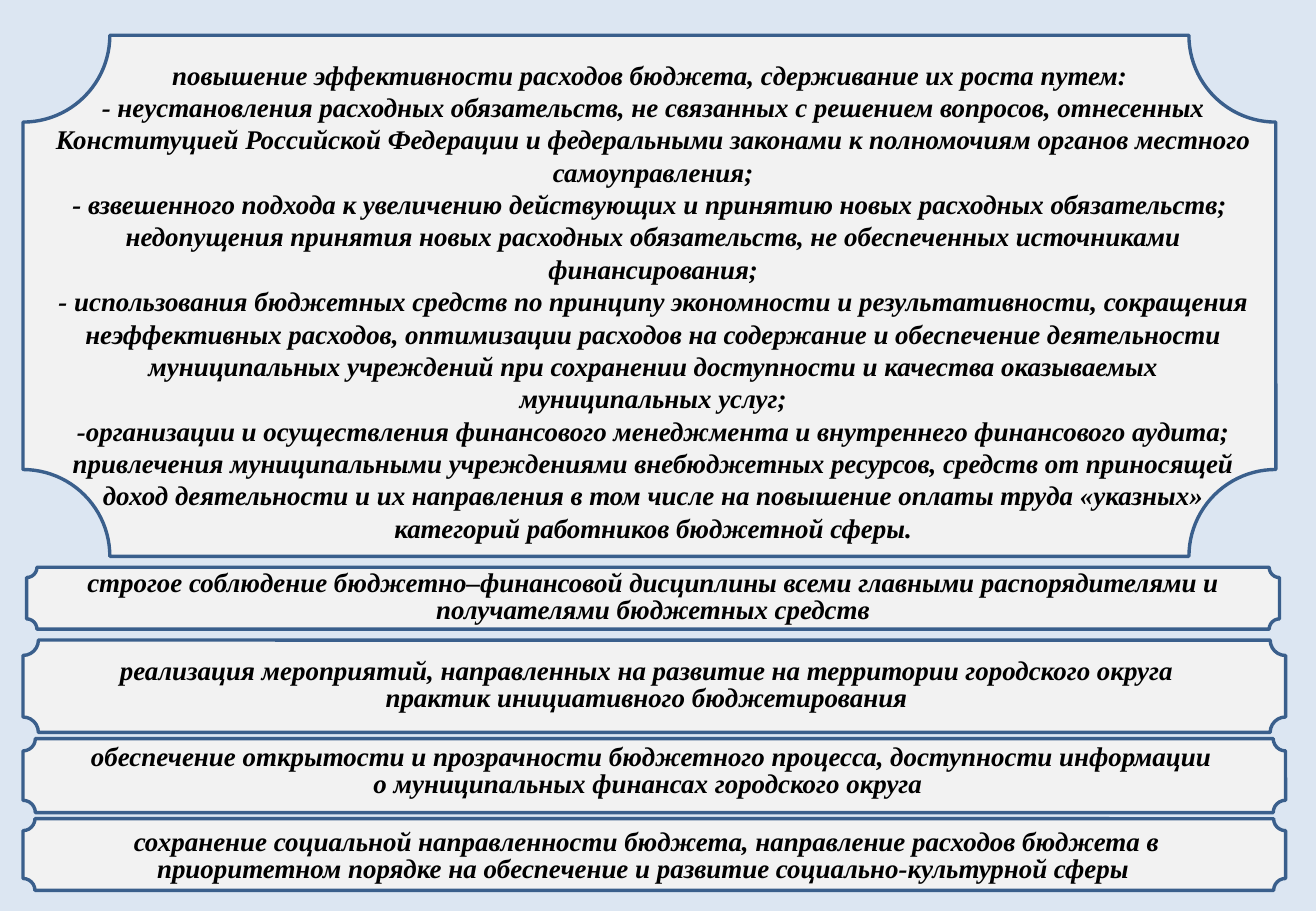
"""Build a slide of five framed budget policy priorities."""
from pptx import Presentation
from pptx.dml.color import RGBColor
from pptx.enum.shapes import MSO_SHAPE
from pptx.enum.text import MSO_ANCHOR, PP_ALIGN
from pptx.util import Inches, Pt

PLAQUE = MSO_SHAPE.PLAQUE
CENTER = PP_ALIGN.CENTER
MIDDLE = MSO_ANCHOR.MIDDLE

COLORS = {"background": "DCE6F2", "frame": "F2F2F2", "border": "3A5F8C", "text": "000000"}
FONT = "Times New Roman"
TEXT_SIZE = Pt(16)
TIGHT = Pt(16)
BLANK_LAYOUT = 6

SPENDING = [
    "повышение эффективности расходов бюджета, сдерживание их роста путем: ",
    "- неустановления расходных обязательств, не связанных с решением вопросов, отнесенных "
    "Конституцией Российской Федерации и федеральными законами к полномочиям органов местного "
    "самоуправления;",
    "- взвешенного подхода к увеличению действующих и принятию новых расходных обязательств; ",
    "недопущения принятия новых расходных обязательств, не обеспеченных источниками финансирования;",
    "- использования бюджетных средств по принципу экономности и результативности, сокращения "
    "неэффективных расходов, оптимизации расходов на содержание и обеспечение деятельности "
    "муниципальных учреждений при сохранении доступности и качества оказываемых муниципальных услуг;",
    "-организации и осуществления финансового менеджмента и внутреннего финансового аудита;",
    "привлечения муниципальными учреждениями внебюджетных ресурсов, средств от приносящей доход "
    "деятельности и их направления в том числе на повышение оплаты труда «указных» категорий "
    "работников бюджетной сферы.",
]
DISCIPLINE = ["строгое соблюдение бюджетно–финансовой дисциплины всеми главными распорядителями и "
              "получателями бюджетных средств"]
INITIATIVES = ["реализация мероприятий, направленных на развитие на территории городского округа "
               "практик инициативного бюджетирования"]
OPENNESS = ["обеспечение открытости и прозрачности бюджетного процесса, доступности информации "
            "о муниципальных финансах городского округа "]
SOCIAL = ["сохранение социальной направленности бюджета, направление расходов бюджета в "
          "приоритетном порядке на обеспечение и развитие социально-культурной сферы "]

# Areas are left, top, width, height in percent of the slide; no text area means text in the frame.
PRIORITIES = [
    (SPENDING, (1.75, 3.87, 95.2, 57.2), (3.23, 5.73, 92.8, 61.73), None),
    (DISCIPLINE, (2.03, 62.27, 95.2, 6.8), None, TIGHT),
    (INITIATIVES, (1.75, 70.27, 95.94, 10.13), (5.36, 71.73, 87.53, 7.33), TIGHT),
    (OPENNESS, (1.75, 81.07, 95.94, 8.13), (5.72, 81.07, 87.53, 7.33), TIGHT),
    (SOCIAL, (1.75, 89.87, 95.94, 7.87), (5.36, 90.4, 87.53, 7.33), TIGHT),
]

deck = Presentation()
deck.slide_width, deck.slide_height = Inches(10.83), Inches(7.5)
slide = deck.slides.add_slide(deck.slide_layouts[BLANK_LAYOUT])


def color(name):
    return RGBColor.from_string(COLORS[name])


def place(area):
    sides = (deck.slide_width, deck.slide_height) * 2
    return [round(side * share / 100) for side, share in zip(sides, area)]


def add_frame(area):
    frame = slide.shapes.add_shape(PLAQUE, *place(area))
    frame.shadow.inherit = False
    frame.fill.solid()
    frame.fill.fore_color.rgb = color("frame")
    frame.line.color.rgb = color("border")
    frame.line.width = Pt(2)
    return frame


def write(holder, lines, spacing):
    text = holder.text_frame
    text.word_wrap = True
    text.text = "\n".join(lines)
    for paragraph in text.paragraphs:
        paragraph.alignment = CENTER
        paragraph.line_spacing = spacing
        font = paragraph.font
        font.name, font.size = FONT, TEXT_SIZE
        font.bold = font.italic = True
        font.color.rgb = color("text")


slide.background.fill.solid()
slide.background.fill.fore_color.rgb = color("background")
for lines, frame_area, text_area, spacing in PRIORITIES:
    holder = add_frame(frame_area)
    if text_area:
        holder = slide.shapes.add_textbox(*place(text_area))
    else:
        holder.text_frame.vertical_anchor = MIDDLE
    write(holder, lines, spacing)

deck.save("out.pptx")
